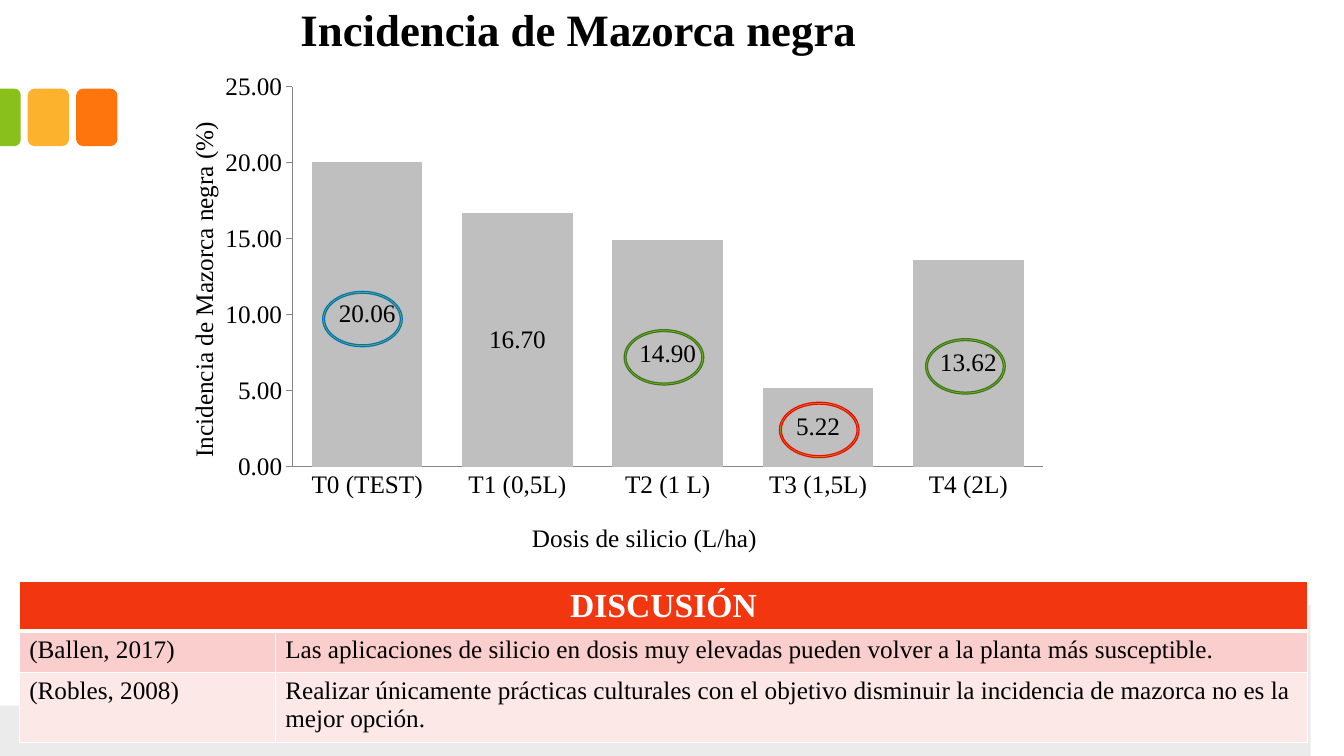
"""Builds the slide on the incidence of black pod disease."""
import lxml.etree
import pptx
import pptx.chart.data
import pptx.dml.color
import pptx.enum.chart
import pptx.enum.shapes
import pptx.enum.text
import pptx.oxml.ns
import pptx.util

Inches = pptx.util.Inches
Pt = pptx.util.Pt
qn = pptx.oxml.ns.qn
SHAPE = pptx.enum.shapes.MSO_SHAPE
FONT = "Times New Roman"


def color(value):
    """Return the colour for a hex string."""
    return pptx.dml.color.RGBColor.from_string(value)


def style_font(font, size, bold=False, value="000000"):
    """Set the typeface, size, weight and colour of a font."""
    font.name, font.size, font.bold = FONT, Pt(size), bold
    font.color.rgb = color(value)


def add_run(paragraph, text, size, bold=False, value="000000"):
    """Add one formatted run to a paragraph."""
    run = paragraph.add_run()
    run.text = text
    style_font(run.font, size, bold, value)


def paint(shape, fill, line=None):
    """Give a shape a solid fill, an optional outline and no shadow."""
    shape.shadow.inherit = False
    shape.fill.solid()
    shape.fill.fore_color.rgb = color(fill)
    if line:
        shape.line.color.rgb = color(line)
        shape.line.width = Pt(0.85)
    else:
        shape.line.fill.background()


def curve(start, first, second, end, steps=24):
    """Return points along a cubic curve, without its start."""
    points = []
    for step in range(1, steps + 1):
        t = step / steps
        weights = ((1 - t) ** 3, 3 * t * (1 - t) ** 2, 3 * t * t * (1 - t), t ** 3)
        points.append(tuple(sum(weight * point[axis] for weight, point
                                in zip(weights, (start, first, second, end)))
                            for axis in (0, 1)))
    return points


def add_wave(slide, points, opacity):
    """Draw a translucent black outline through points in inches."""
    builder = slide.shapes.build_freeform(*points[0], scale=Inches(1))
    builder.add_line_segments(points[1:], close=True)
    shape = builder.convert_to_shape()
    paint(shape, "000000")
    fill_color = shape._element.spPr.find(qn("a:solidFill"))[0]
    alpha = lxml.etree.SubElement(fill_color, qn("a:alpha"))
    alpha.set("val", str(opacity * 1000))


def add_background(slide, width, height):
    """Draw the two waves along the foot of the slide."""
    add_wave(slide, [(width, 6.18), (width, height), (0, height), (0, 6.75)]
             + curve((0, 6.75), (3.52, 6.83), (10.42, 6.55), (width, 6.18)), 8)
    add_wave(slide, [(width, 5.92), (width, 6.12)]
             + curve((width, 6.12), (12.55, 6.23), (11.49, 6.33), (10.29, 6.41))
             + curve((10.29, 6.41), (6.98, 6.63), (2.58, 6.77), (0, 6.71))
             + [(0, 6.57)]
             + curve((0, 6.57), (6.52, 6.62), (9.71, 6.27), (width, 5.92)), 5)


def add_tabs(slide, left, top, width, height):
    """Draw the three coloured tabs at the left edge."""
    gap = 0.07
    half = width / 2
    for index, fill in enumerate(("FCB22C", "FE750E")):
        tab = slide.shapes.add_shape(
            SHAPE.ROUNDED_RECTANGLE, Inches(left + half + gap + index * (width + gap)),
            Inches(top), Inches(width), Inches(height))
        paint(tab, fill)
    tab = slide.shapes.add_shape(
        SHAPE.ROUND_2_SAME_RECTANGLE, Inches(left + (half - height) / 2),
        Inches(top + (height - half) / 2), Inches(height), Inches(half))
    tab.rotation = 90
    tab.adjustments[0] = 0.29
    paint(tab, "89C01C")


def add_title(slide, left, top, width, height):
    """Fill and place the title placeholder."""
    title = slide.shapes.title
    title.left, title.top = Inches(left), Inches(top)
    title.width, title.height = Inches(width), Inches(height)
    frame = title.text_frame
    frame.vertical_anchor = pptx.enum.text.MSO_ANCHOR.TOP
    paragraph = frame.paragraphs[0]
    paragraph.alignment = pptx.enum.text.PP_ALIGN.LEFT
    add_run(paragraph, "Incidencia de Mazorca negra", 32, True)


def set_layout(parent, **values):
    """Place a chart part by fractions of the chart's size."""
    layout = parent.find(qn("c:layout"))
    if layout is None:
        layout = lxml.etree.Element(qn("c:layout"))
        parent.insert(len(parent.findall(qn("c:tx"))), layout)
    manual = lxml.etree.SubElement(layout, qn("c:manualLayout"))
    settings = {"xMode": "edge", "yMode": "edge", **values}
    if "w" in values:
        settings = {"layoutTarget": "inner", **settings}
    for name, value in settings.items():
        lxml.etree.SubElement(manual, qn("c:" + name)).set("val", str(value))


def style_axis(axis, title, tick, x, y):
    """Format an axis and place its title."""
    axis.has_major_gridlines = False
    axis.major_tick_mark = tick
    axis.format.line.color.rgb = color("868686")
    axis.format.line.width = Pt(0.75)
    style_font(axis.tick_labels.font, 18)
    add_run(axis.axis_title.text_frame.paragraphs[0], title, 18)
    set_layout(axis.axis_title._element, x=x, y=y)


def add_incidence_chart(slide, left, top, width, height):
    """Add the column chart of incidence by silicon dose."""
    data = pptx.chart.data.CategoryChartData(number_format="0.00")
    data.categories = ["T0 (TEST)", "T1 (0,5L)", "T2 (1 L)", "T3 (1,5L)", "T4 (2L)"]
    data.add_series("Series 1", (20.06, 16.7, 14.9, 5.22, 13.62))
    chart = slide.shapes.add_chart(
        pptx.enum.chart.XL_CHART_TYPE.COLUMN_CLUSTERED, Inches(left), Inches(top),
        Inches(width), Inches(height), data).chart
    chart.has_title = chart.has_legend = False
    style_font(chart.font, 18)
    plot = chart.plots[0]
    plot.gap_width, plot.overlap = 36, 68
    plot.vary_by_categories = False
    bars = plot.series[0].format
    bars.fill.solid()
    bars.fill.fore_color.rgb = color("BFBFBF")
    plot.has_data_labels = True
    labels = plot.data_labels
    labels.show_value = True
    labels.position = pptx.enum.chart.XL_LABEL_POSITION.CENTER
    labels.number_format, labels.number_format_is_linked = "0.00", False
    style_font(labels.font, 18)
    ticks = pptx.enum.chart.XL_TICK_MARK
    style_axis(chart.category_axis, "Dosis de silicio (L/ha)", ticks.NONE, 0.41, 0.9)
    values = chart.value_axis
    style_axis(values, "Incidencia de Mazorca negra (%)", ticks.OUTSIDE, 0.03, 0.11)
    values.minimum_scale, values.maximum_scale, values.major_unit = 0, 25, 5
    values.tick_labels.number_format = "0.00"
    values.tick_labels.number_format_is_linked = False
    set_layout(chart._chartSpace.chart.plotArea, x=0.15, y=0.05, w=0.83, h=0.75)


def add_ring(slide, left, top, line):
    """Draw a thin ring around a chart value."""
    ring = slide.shapes.add_shape(SHAPE.DONUT, Inches(left), Inches(top),
                                  Inches(0.79), Inches(0.55))
    ring.adjustments[0] = 0.035
    paint(ring, "89C01C", line)


def style_cell(cell, fill, bottom=1):
    """Fill a cell and give it white borders."""
    cell.fill.solid()
    cell.fill.fore_color.rgb = color(fill)
    properties = cell._tc.get_or_add_tcPr()
    for index, (side, weight) in enumerate(zip("LRTB", (1, 1, 1, bottom))):
        border = lxml.etree.Element(qn("a:ln" + side), w=str(Pt(weight)))
        solid = lxml.etree.SubElement(border, qn("a:solidFill"))
        lxml.etree.SubElement(solid, qn("a:srgbClr")).set("val", "FFFFFF")
        properties.insert(index, border)


def add_discussion_table(slide, left, top, columns, rows):
    """Add the discussion table with its merged heading."""
    table = slide.shapes.add_table(
        len(rows), len(columns), Inches(left), Inches(top),
        Inches(sum(columns)), Inches(sum(rows))).table
    for column, width in zip(table.columns, columns):
        column.width = Inches(width)
    for row, height in zip(table.rows, rows):
        row.height = Inches(height)
    heading = table.cell(0, 0)
    heading.merge(table.cell(0, 1))
    for cell in table.rows[0].cells:
        style_cell(cell, "F23610", 3)
    heading.vertical_anchor = pptx.enum.text.MSO_ANCHOR.MIDDLE
    paragraph = heading.text_frame.paragraphs[0]
    paragraph.alignment = pptx.enum.text.PP_ALIGN.CENTER
    add_run(paragraph, "DISCUSIÓN", 24, True, "FFFFFF")
    entries = (
        ("FACECC", "(Ballen, 2017)", "Las aplicaciones de silicio en dosis muy elevadas "
         "pueden volver a la planta más susceptible."),
        ("FCE8E7", "(Robles, 2008)", "Realizar únicamente prácticas culturales con el objetivo "
         "disminuir la incidencia de mazorca no es la mejor opción."))
    for row, (fill, *texts) in enumerate(entries, 1):
        for cell, text in zip(table.rows[row].cells, texts):
            style_cell(cell, fill)
            add_run(cell.text_frame.paragraphs[0], text, 18)


def main():
    """Build and save the presentation."""
    presentation = pptx.Presentation()
    presentation.slide_width, presentation.slide_height = Inches(13.33), Inches(7.5)
    slide = presentation.slides.add_slide(presentation.slide_layouts[5])
    add_background(slide, 13.33, 7.5)
    add_tabs(slide, 0, 0.88, 0.41, 0.57)
    add_incidence_chart(slide, 1.55, 0.61, 8.98, 5.03)
    add_title(slide, 2.88, -0.03, 9.69, 0.64)
    for left, top, line in ((3.2, 2.89, "0070C0"), (6.19, 3.27, "3E7520"),
                            (7.73, 3.99, "FF0000"), (9.18, 3.36, "3E7520")):
        add_ring(slide, left, top, line)
    add_discussion_table(slide, 0.19, 5.77, (2.54, 10.24), (0.49, 0.41, 0.7))
    presentation.save("out.pptx")


if __name__ == "__main__":
    main()
